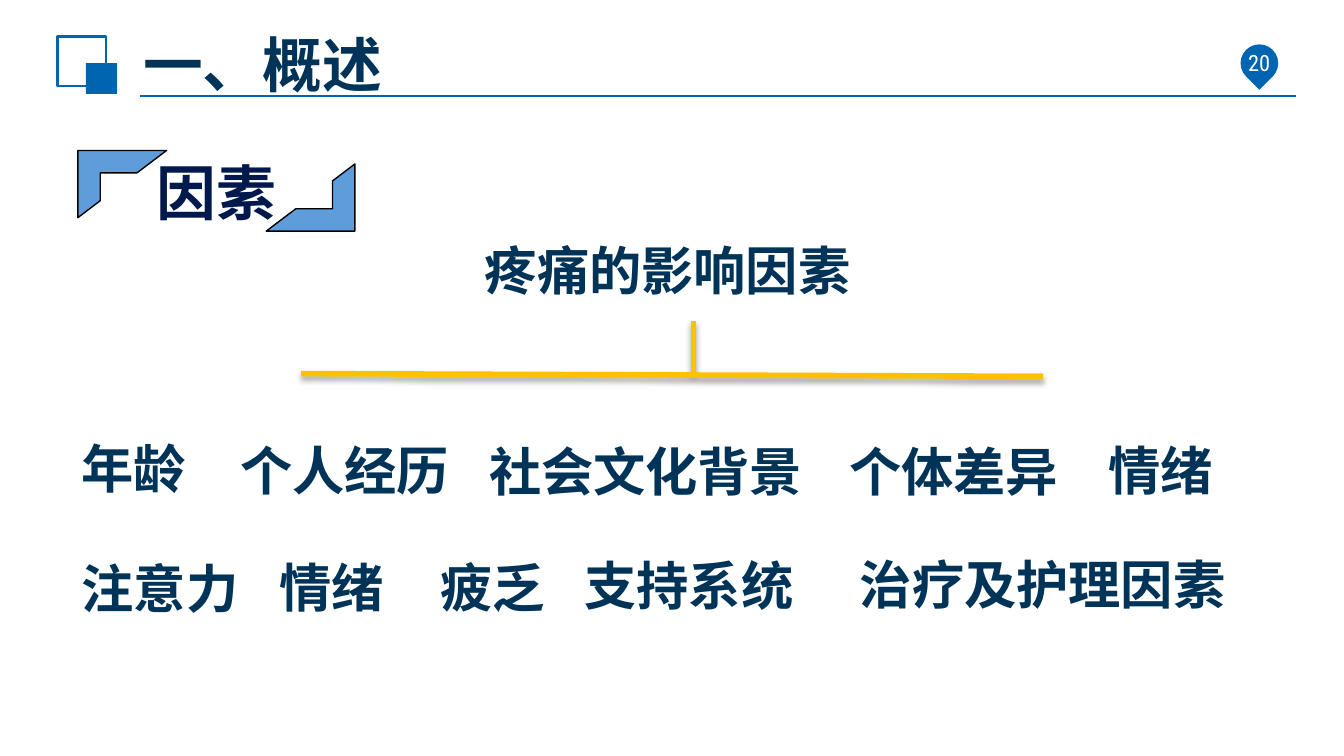
import pptx
import pptx.util
import pptx.dml.color
import pptx.enum.shapes
import pptx.enum.text
import pptx.oxml
import pptx.oxml.ns

RGB = pptx.dml.color.RGBColor
BLUE = RGB(0x00, 0x65, 0xB0)
SKY = RGB(0x5E, 0x9C, 0xDA)
NAVY = RGB(0x00, 0x33, 0x58)
INK = RGB(0x00, 0x19, 0x4C)
GOLD = RGB(0xFF, 0xC0, 0x00)
BLACK = RGB(0, 0, 0)
WHITE = RGB(0xFF, 0xFF, 0xFF)

SHAPE = pptx.enum.shapes.MSO_SHAPE
ALIGN = pptx.enum.text.PP_ALIGN
FIT = pptx.enum.text.MSO_AUTO_SIZE
MIDDLE = pptx.enum.text.MSO_ANCHOR.MIDDLE
HAN = "Noto Sans CJK SC"
NS = pptx.oxml.ns.nsdecls("a")
SHADE = ('<a:outerShdw blurRad="39370" dist="22860" dir="5400000" rotWithShape="0">'
         '<a:srgbClr val="000000"><a:alpha val="35000"/></a:srgbClr></a:outerShdw>')


def unit(n):
    """One grid column or row is a tenth of an inch."""
    return pptx.util.Inches(n / 10)


class Board:
    def __init__(self, deck):
        self.slide = deck.slides.add_slide(deck.slide_layouts[5])

    def style(self, frame, text, size, color, face="Arial", bold=True, align=ALIGN.LEFT):
        frame.text = text
        para = frame.paragraphs[0]
        para.alignment = align
        font = para.font
        font.size, font.bold, font.name = pptx.util.Pt(size), bold, face
        font.color.rgb = color
        east = pptx.oxml.parse_xml(f'<a:ea {NS} typeface="{HAN}"/>')
        para._p.pPr.defRPr.append(east)

    def title(self, text, box):
        head = self.slide.shapes.title
        head.left, head.top, head.width, head.height = map(unit, box)
        frame = head.text_frame
        frame.auto_size, frame.vertical_anchor = FIT.NONE, MIDDLE
        frame.margin_left = frame.margin_right = unit(0.75)
        frame.margin_top = frame.margin_bottom = unit(0.4)
        self.style(frame, text, 32, NAVY)

    def text(self, text, box, size=28, color=NAVY, **look):
        frame = self.slide.shapes.add_textbox(*map(unit, box)).text_frame
        frame.word_wrap, frame.auto_size = True, FIT.SHAPE_TO_FIT_TEXT
        self.style(frame, text, size, color, **look)
        return frame

    def shape(self, kind, box, fill=None, line=None, width=1, turn=0):
        item = self.slide.shapes.add_shape(kind, *map(unit, box))
        item.shadow.inherit = False
        item.rotation = turn
        if fill is None:
            item.fill.background()
        else:
            item.fill.solid()
            item.fill.fore_color.rgb = fill
        if line is None:
            item.line.fill.background()
        else:
            item.line.color.rgb = line
            item.line.width = pptx.util.Pt(width)

    def line(self, start, end, color, width, shade=""):
        item = self.slide.shapes.add_connector(
            pptx.enum.shapes.MSO_CONNECTOR.STRAIGHT, *map(unit, start + end))
        item.line.color.rgb = color
        item.line.width = pptx.util.Pt(width)
        item._element.spPr.append(
            pptx.oxml.parse_xml(f"<a:effectLst {NS}>{shade}</a:effectLst>"))


def main():
    deck = pptx.Presentation()
    deck.slide_width, deck.slide_height = unit(100), unit(56.25)
    board = Board(deck)

    # Header band and page marker
    board.line((10.4, 7.15), (96.4, 7.15), BLUE, 1.25)
    board.shape(SHAPE.RECTANGLE, (4.3, 2.7, 3.6, 3.7), line=BLUE, width=1.5)
    board.shape(SHAPE.RECTANGLE, (6.4, 4.7, 2.3, 2.3), fill=BLUE)
    board.shape(SHAPE.TEAR, (92.3, 3.3, 2.8, 2.8), fill=BLUE, turn=135)
    board.title("一、概述", (9.9, 2.9, 64.5, 3.6))
    page = board.text("20", (87, 3, 13.4, 3.3), 12, WHITE,
                      face="Roboto Condensed", bold=False, align=ALIGN.CENTER)
    page.auto_size, page.vertical_anchor = FIT.NONE, MIDDLE

    # Framed section label
    for left, top, turn in ((5.8, 11.2, 0), (19.8, 12.2, 180)):
        board.shape(SHAPE.HALF_FRAME, (left, top, 6.6, 5), SKY, BLACK, 0.75, turn)
    board.text("因素", (10.7, 11.1, 12.3, 6.4), 32, INK, face=HAN)

    # Heading with its branch
    board.text("疼痛的影响因素", (35.1, 17.2, 30.7, 5.7))
    board.line((51.6, 23.9), (51.6, 27.8), GOLD, 3, SHADE)
    board.line((77.6, 28), (22.4, 27.8), GOLD, 3, SHADE)

    # Factors: text, left, top, width
    factors = (
        ("年龄", 5.1, 32, 18.9),
        ("情绪", 81.5, 32.1, 13.7),
        ("个人经历", 16.9, 32.1, 18.9),
        ("社会文化背景", 35.4, 32.2, 26.1),
        ("个体差异", 62.2, 32.2, 18.9),
        ("注意力", 5.1, 40.9, 15.7),
        ("情绪", 19.8, 40.8, 13.4),
        ("疲乏", 31.8, 40.8, 12.1),
        ("支持系统", 42.5, 40.7, 18.9),
        ("治疗及护理因素", 63, 40.6, 30.7),
    )
    for text, left, top, width in factors:
        board.text(text, (left, top, width, 5.7))

    deck.save("out.pptx")


if __name__ == "__main__":
    main()
